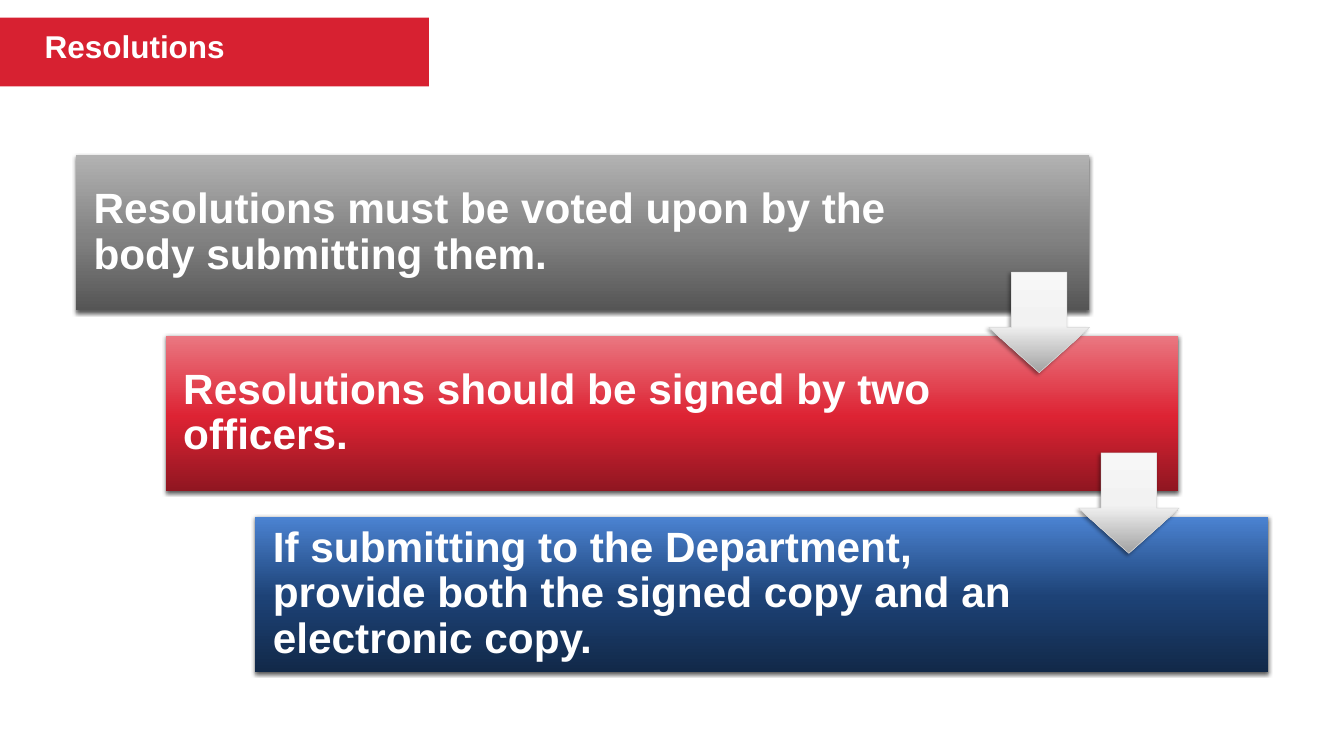
from copy import deepcopy

from pptx import Presentation
from pptx.dml.color import RGBColor
from pptx.enum.shapes import MSO_SHAPE as Preset
from pptx.enum.text import MSO_ANCHOR as Anchor, PP_ALIGN as Align
from pptx.oxml import parse_xml
from pptx.oxml.ns import nsdecls, qn
from pptx.util import Inches, Pt

WHITE = RGBColor(0xFF, 0xFF, 0xFF)
BANNER_RED = RGBColor(0xD7, 0x21, 0x31)
ARROW_LINE = RGBColor(0xD9, 0xD9, 0xD9)
GRAYS = [RGBColor(0x55, 0x55, 0x55), RGBColor(0x83, 0x83, 0x83), RGBColor(0xB2, 0xB2, 0xB2)]
REDS = [RGBColor(0x90, 0x16, 0x21), RGBColor(0xDD, 0x23, 0x33), RGBColor(0xEA, 0x77, 0x81)]
BLUES = [RGBColor(0x12, 0x29, 0x49), RGBColor(0x1D, 0x42, 0x76), RGBColor(0x4B, 0x83, 0xD2)]
SILVERS = [RGBColor(0xA2, 0xA2, 0xA2), RGBColor(0xF2, 0xF2, 0xF2), RGBColor(0xF7, 0xF7, 0xF7)]

STEPS = [
    ("Resolutions must be voted upon by the body submitting them.", GRAYS, 2.47),
    ("Resolutions should be signed by two officers.", REDS, 2.93),
    ("If submitting to the Department, provide both the signed copy and an electronic copy.", BLUES, 2.93),
]
CARD_LEFT, CARD_TOP, CARD_WIDTH, CARD_HEIGHT = 1.07, 2.19, 14.29, 2.19
STEP_X, STEP_Y = 1.265, 2.55
ARROW_LEFT, ARROW_TOP, ARROW_SIZE = 13.95, 3.84, 1.42


def style_shape(shape, colors, alpha, blur, distance, direction):
    shape.fill.gradient()
    shape.fill.gradient_angle = 90
    stop_list = shape._element.spPr.find(qn("a:gradFill")).find(qn("a:gsLst"))
    stop_list.insert(1, deepcopy(stop_list[0]))
    for stop, color, position in zip(shape.fill.gradient_stops, colors, (0, 0.48, 1)):
        stop.color.rgb = color
        stop.position = position
    shape.line.fill.background()
    shape.shadow.inherit = False
    shape._element.spPr.find(qn("a:effectLst")).append(parse_xml(
        f'<a:outerShdw {nsdecls("a")} blurRad="{Pt(blur)}" dist="{Pt(distance)}" '
        f'dir="{direction * 60000}" rotWithShape="0"><a:srgbClr val="000000">'
        f'<a:alpha val="{alpha * 1000}"/></a:srgbClr></a:outerShdw>'))


def write_text(frame, text, size, line_spacing):
    frame.word_wrap = True
    paragraph = frame.paragraphs[0]
    paragraph.alignment = Align.LEFT
    paragraph.line_spacing = line_spacing
    run = paragraph.add_run()
    run.text = text
    run.font.name = "Arial"
    run.font.size = Pt(size)
    run.font.bold = True
    run.font.color.rgb = WHITE


presentation = Presentation()
presentation.slide_width = Inches(18.96)
presentation.slide_height = Inches(10.67)
slide = presentation.slides.add_slide(presentation.slide_layouts[6])

banner = slide.shapes.add_shape(Preset.RECTANGLE, Inches(0), Inches(0.25), Inches(6.05), Inches(0.97))
banner.fill.solid()
banner.fill.fore_color.rgb = BANNER_RED
banner.line.fill.background()
banner.shadow.inherit = False

title = slide.shapes.add_textbox(Inches(0.53), Inches(0.43), Inches(4.55), Inches(0.57))
write_text(title.text_frame, "Resolutions", 32, 0.8)

for index, (text, colors, right_inset) in enumerate(STEPS):
    card = slide.shapes.add_shape(
        Preset.RECTANGLE, Inches(CARD_LEFT + index * STEP_X), Inches(CARD_TOP + index * STEP_Y),
        Inches(CARD_WIDTH), Inches(CARD_HEIGHT))
    style_shape(card, colors, 63, 4.5, 1.5, 90)
    frame = card.text_frame
    frame.margin_left = Inches(0.25)
    frame.margin_right = Inches(right_inset)
    frame.margin_top = frame.margin_bottom = Inches(0.05)
    frame.vertical_anchor = Anchor.MIDDLE
    write_text(frame, text, 43, 0.9)

for index in range(len(STEPS) - 1):
    arrow = slide.shapes.add_shape(
        Preset.DOWN_ARROW, Inches(ARROW_LEFT + index * STEP_X), Inches(ARROW_TOP + index * STEP_Y),
        Inches(ARROW_SIZE), Inches(ARROW_SIZE))
    arrow.adjustments[0] = 0.55
    arrow.adjustments[1] = 0.45
    style_shape(arrow, SILVERS, 40, 4, 3, 135)
    arrow.line.color.rgb = ARROW_LINE
    arrow.line.width = Pt(0.5)

presentation.save("out.pptx")
